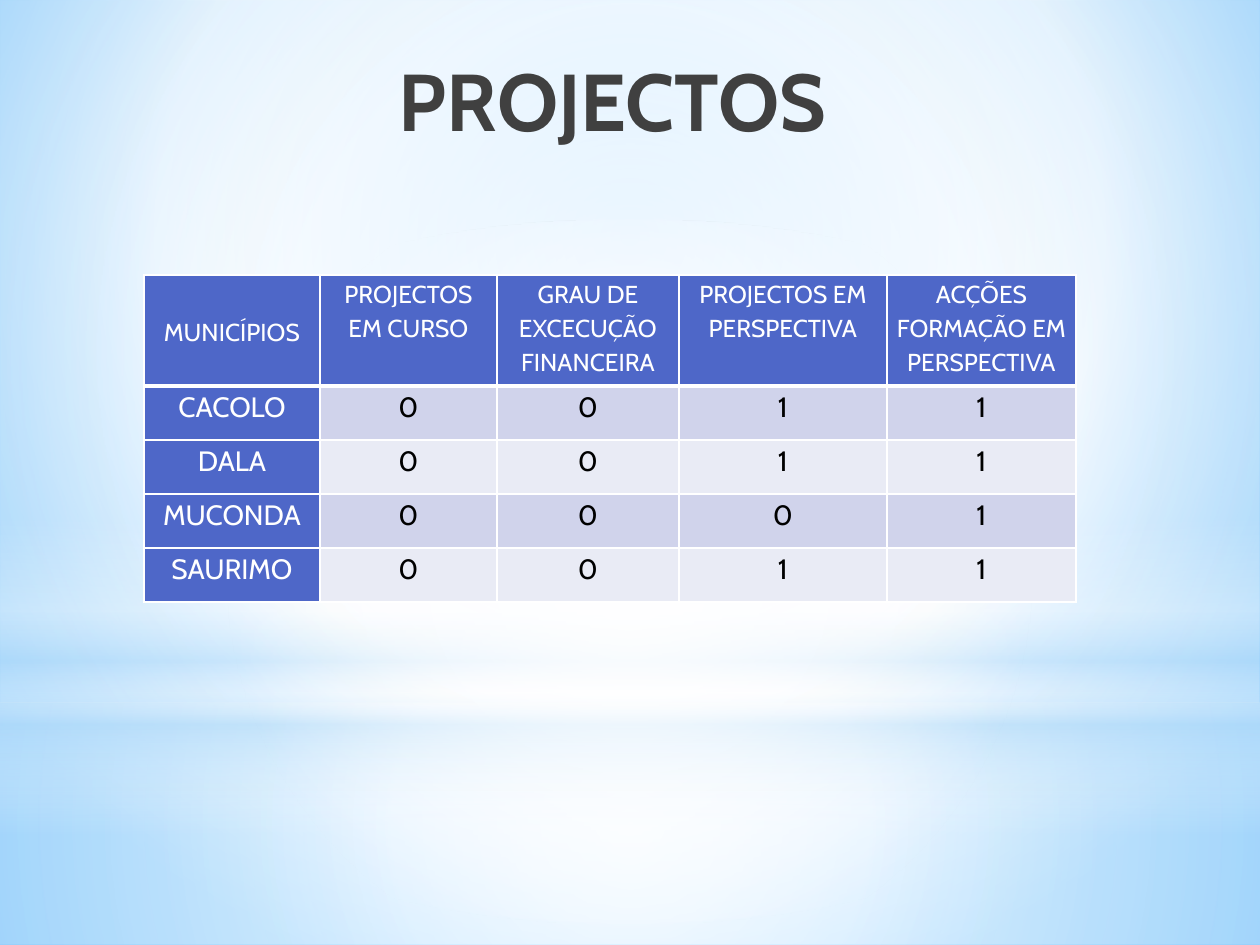
from dataclasses import dataclass
from typing import NamedTuple

from lxml.etree import SubElement
from pptx import Presentation
from pptx.dml.color import RGBColor as Color
from pptx.enum.shapes import MSO_SHAPE as Shape
from pptx.enum.text import MSO_ANCHOR as Anchor, PP_ALIGN as Align
from pptx.oxml.ns import qn
from pptx.util import Emu, Pt

EMU_PER_PX = 914400 / 126


@dataclass(frozen=True)
class Theme:
    font: str = "Cabin"
    title: str = "404040"
    accent: str = "4E67C8"
    light: str = "FFFFFF"
    dark: str = "000000"
    bands: tuple[str, str] = ("D0D3EB", "E9EBF5")
    title_size: int = 46
    header_size: int = 14
    body_size: int = 16
    line_spacing: float = 1.15
    border: int = 1
    header_border: int = 3


class Box(NamedTuple):
    left: int
    top: int
    width: int
    height: int


class Stop(NamedTuple):
    position: int
    color: str
    opacity: int = 100


class Gradient(NamedTuple):
    stops: list[Stop]
    focus: tuple[int, int, int, int] | None = (50, 50, 50, 50)
    angle: int = 90


class Glow(NamedTuple):
    kind: Shape
    box: Box
    gradient: Gradient


class Style(NamedTuple):
    size: int
    color: str
    bold: bool = False


THEME = Theme()
PAGE = Box(0, 0, 1260, 945)
TITLE = Box(164, 45, 897, 158)
TABLE = Box(144, 275, 932, 327)
COLUMNS = [176, 177, 182, 208, 189]
ROWS = [111, 54, 54, 54, 54]
CELL_MARGIN = 9
HORIZON = 703

BACKDROP = Gradient(
    [Stop(0, "9ED5FF"), Stop(60, "FFFFFF"), Stop(100, "5BB9FF")], (20, 10, 20, 60)
)
GLOWS = [
    Glow(Shape.RECTANGLE, Box(0, HORIZON, PAGE.width, PAGE.height - HORIZON), Gradient(
        [Stop(0, "FFFFFF", 91), Stop(37, "FFFFFF", 76), Stop(100, "B4DCFA", 79)])),
    Glow(Shape.RECTANGLE, Box(0, 0, PAGE.width, HORIZON), Gradient(
        [Stop(0, "FFFFFF", 89), Stop(48, "FFFFFF", 62), Stop(100, "B4DCFA", 79)])),
    Glow(Shape.RECTANGLE, Box(0, 519, PAGE.width, 315), Gradient(
        [Stop(0, "FFFFFF", 0), Stop(29, "FFFFFF", 30), Stop(45, "B4DCFA", 40),
         Stop(55, "FFFFFF", 26), Stop(65, "B4DCFA", 60), Stop(100, "FFFFFF", 0)], None)),
    Glow(Shape.OVAL, Box(0, 220, PAGE.width, HORIZON), Gradient(
        [Stop(0, "FFFFFF"), Stop(56, "FFFFFF", 0)])),
]
HEADERS = [
    "MUNICÍPIOS",
    "PROJECTOS EM CURSO",
    "GRAU DE EXCECUÇÃO FINANCEIRA",
    "PROJECTOS EM PERSPECTIVA",
    "ACÇÕES FORMAÇÃO EM PERSPECTIVA",
]
PROJECTS = {
    "CACOLO": [0, 0, 1, 1],
    "DALA": [0, 0, 1, 1],
    "MUCONDA": [0, 0, 0, 1],
    "SAURIMO": [0, 0, 1, 1],
}


def px(length: int) -> Emu:
    return Emu(round(length * EMU_PER_PX))


def place(box: Box) -> list[Emu]:
    return [px(length) for length in box]


def paint_gradient(holder, gradient: Gradient) -> None:
    solid = holder.find(qn("a:solidFill"))
    fill = SubElement(holder, qn("a:gradFill"), rotWithShape="1")
    holder.replace(solid, fill)
    stops = SubElement(fill, qn("a:gsLst"))
    for stop in gradient.stops:
        mark = SubElement(stops, qn("a:gs"), pos=str(stop.position * 1000))
        color = SubElement(mark, qn("a:srgbClr"), val=stop.color)
        if stop.opacity < 100:
            SubElement(color, qn("a:alpha"), val=str(stop.opacity * 1000))
    if gradient.focus:
        circle = SubElement(fill, qn("a:path"), path="circle")
        edges = {side: str(inset * 1000) for side, inset in zip("ltrb", gradient.focus)}
        SubElement(circle, qn("a:fillToRect"), **edges)
    else:
        SubElement(fill, qn("a:lin"), ang=str(gradient.angle * 60000), scaled="0")


def draw_glow(page, glow: Glow) -> None:
    shape = page.shapes.add_shape(glow.kind, *place(glow.box))
    shape.shadow.inherit = False
    shape.line.fill.background()
    shape.fill.solid()
    paint_gradient(shape.element.spPr, glow.gradient)


def write(frame, text: str, style: Style, spacing: float = 1.0) -> None:
    frame.word_wrap = True
    para = frame.paragraphs[0]
    para.alignment = Align.CENTER
    para.line_spacing = spacing
    span = para.add_run()
    span.text = text
    span.font.name = THEME.font
    span.font.size = Pt(style.size)
    span.font.bold = style.bold
    span.font.color.rgb = Color.from_string(style.color)


def draw_title(page) -> None:
    box = page.shapes.add_textbox(*place(TITLE))
    box.text_frame.vertical_anchor = Anchor.TOP
    write(box.text_frame, "PROJECTOS", Style(THEME.title_size, THEME.title, True))


def draw_cell(cell, text: str, fill: str, style: Style, bottom: int) -> None:
    cell.margin_left = cell.margin_right = px(CELL_MARGIN)
    cell.margin_top = cell.margin_bottom = 0
    cell.vertical_anchor = Anchor.TOP
    write(cell.text_frame, text, style, THEME.line_spacing)
    properties = cell._tc.get_or_add_tcPr()
    for side in "LRTB":
        width = bottom if side == "B" else THEME.border
        line = SubElement(properties, qn(f"a:ln{side}"), w=str(Pt(width)))
        paint = SubElement(line, qn("a:solidFill"))
        SubElement(paint, qn("a:srgbClr"), val=THEME.light)
    cell.fill.solid()
    cell.fill.fore_color.rgb = Color.from_string(fill)


def draw_table(page) -> None:
    table = page.shapes.add_table(len(ROWS), len(COLUMNS), *place(TABLE)).table
    table.first_row = table.horz_banding = False
    for column, width in zip(table.columns, COLUMNS):
        column.width = px(width)
    for row, height in zip(table.rows, ROWS):
        row.height = px(height)

    header = Style(THEME.header_size, THEME.light)
    label = Style(THEME.body_size, THEME.light)
    value = Style(THEME.body_size, THEME.dark)
    for column, text in enumerate(HEADERS):
        draw_cell(table.cell(0, column), text, THEME.accent, header, THEME.header_border)
    table.cell(0, 0).vertical_anchor = Anchor.MIDDLE
    for row, (town, counts) in enumerate(PROJECTS.items(), start=1):
        draw_cell(table.cell(row, 0), town, THEME.accent, label, THEME.border)
        band = THEME.bands[(row - 1) % 2]
        for column, count in enumerate(counts, start=1):
            draw_cell(table.cell(row, column), str(count), band, value, THEME.border)


def main() -> None:
    deck = Presentation()
    deck.slide_width, deck.slide_height = px(PAGE.width), px(PAGE.height)
    page = deck.slides.add_slide(deck.slide_layouts[6])
    page.background.fill.solid()
    paint_gradient(page.element.find(".//" + qn("p:bgPr")), BACKDROP)
    for glow in GLOWS:
        draw_glow(page, glow)
    draw_title(page)
    draw_table(page)
    deck.save("out.pptx")


if __name__ == "__main__":
    main()
